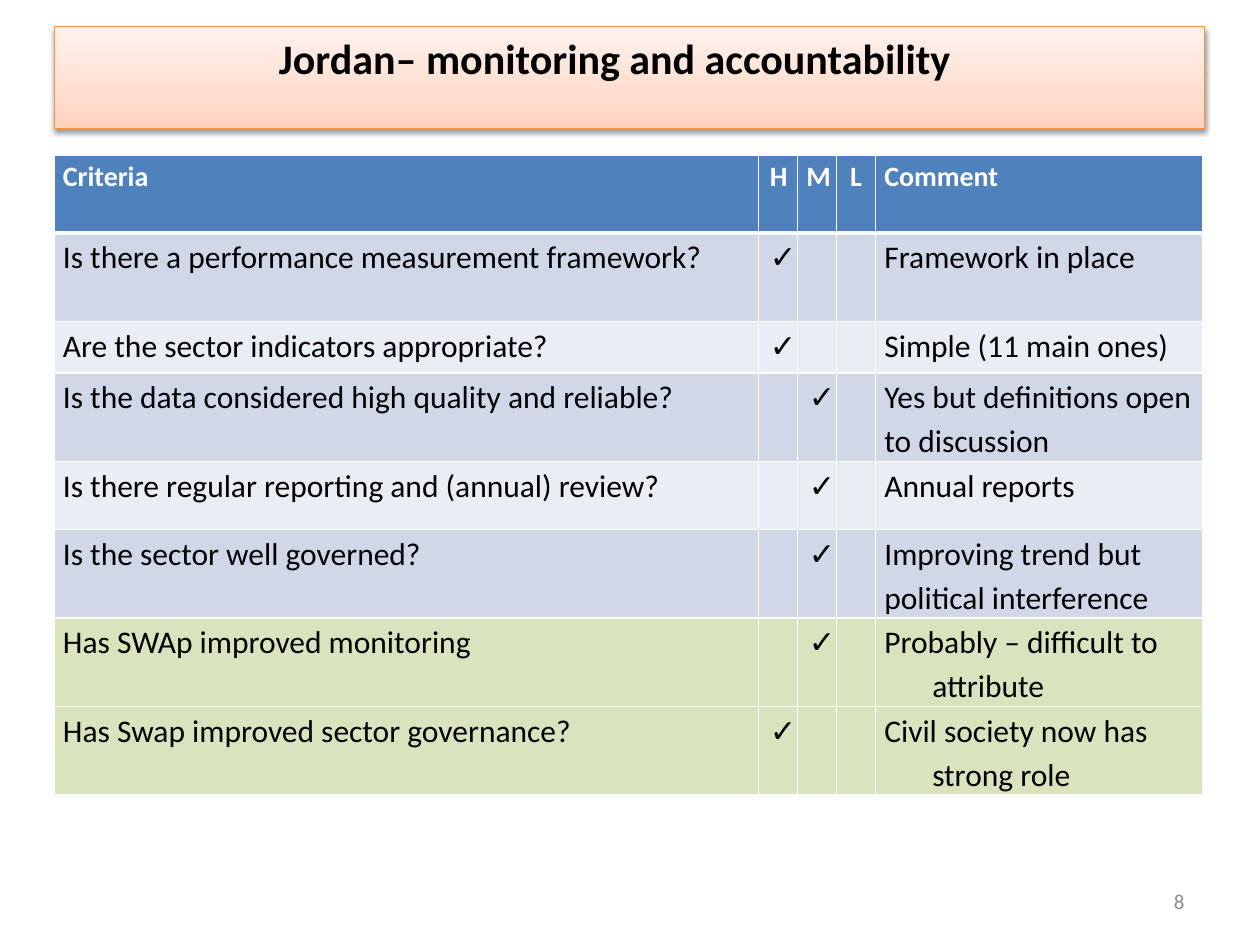
from copy import deepcopy

from lxml import etree
from pptx import Presentation
from pptx.dml.color import RGBColor
from pptx.enum.text import MSO_ANCHOR, PP_ALIGN
from pptx.oxml.ns import qn
from pptx.util import Inches, Pt

WHITE = RGBColor(0xFF, 0xFF, 0xFF)
BLACK = RGBColor(0, 0, 0)
GREY = RGBColor(0x8C, 0x8C, 0x8C)
ORANGE = RGBColor(0xF6, 0x92, 0x40)
HEADER_BLUE = RGBColor(0x4F, 0x81, 0xBD)
BANDS = (RGBColor(0xD0, 0xD8, 0xE8), RGBColor(0xE9, 0xED, 0xF4))
GREEN = RGBColor(0xD7, 0xE4, 0xBD)
BANNER_STOPS = (
    (0, RGBColor(0xFF, 0xD2, 0xBD)),
    (0.35, RGBColor(0xFF, 0xDE, 0xD0)),
    (1, RGBColor(0xFF, 0xF2, 0xED)),
)

HEADER = ("Criteria", "H", "M", "L", "Comment")
RATINGS = "HML"
CRITERIA = (
    ("Is there a performance measurement framework?", "H", "Framework in place"),
    ("Are the sector indicators appropriate?", "H", "Simple (11 main ones)"),
    ("Is the data considered high quality and reliable?", "M",
     "Yes but definitions open to discussion"),
    ("Is there regular reporting and (annual) review?", "M", "Annual reports"),
    ("Is the sector well governed?", "M",
     "Improving trend but political interference"),
    ("Has SWAp improved monitoring", "M", "Probably – difficult to attribute"),
    ("Has Swap improved sector governance?", "H",
     "Civil society now has strong role"),
)
FIRST_SWAP_ROW = 6
COLUMN_WIDTHS = (5.59, 0.31, 0.31, 0.31, 2.6)
ROW_HEIGHTS = (0.62, 0.7, 0.41, 0.7, 0.54, 0.7, 0.7, 0.7)
HANGING = (0.38, -0.38)
MARK_INDENT = (0.02, 0)

HEADER_FONT = {"name": "Calibri", "size": Pt(16), "bold": True}
BODY_FONT = {"name": "Calibri", "size": Pt(18), "bold": False}
TITLE_FONT = {"name": "Calibri", "size": Pt(24), "bold": True}
NUMBER_FONT = {"name": "Calibri", "size": Pt(12)}


def set_all(target, values):
    for name, value in values.items():
        setattr(target, name, value)


def format_font(font, values, color):
    set_all(font, values)
    font.color.rgb = color


def place(shape, box):
    names = ("left", "top", "width", "height")
    set_all(shape, dict(zip(names, map(Inches, box))))


def add_shadow(shape):
    shape.shadow.inherit = False
    effects = shape._element.spPr.find(qn("a:effectLst"))
    shadow = etree.SubElement(effects, qn("a:outerShdw"), blurRad=str(Pt(3.1)),
                              dist=str(Pt(1.6)), dir="5400000", rotWithShape="0")
    color = etree.SubElement(shadow, qn("a:srgbClr"), val=str(BLACK))
    etree.SubElement(color, qn("a:alpha"), val="38000")


def format_banner(title, box):
    place(title, box)
    title.fill.gradient()
    title.fill.gradient_angle = 90
    stop_list = title._element.spPr.find(".//" + qn("a:gsLst"))
    stop_list.insert(1, deepcopy(stop_list[0]))
    for stop, (position, color) in zip(title.fill.gradient_stops, BANNER_STOPS):
        stop.position = position
        stop.color.rgb = color
    title.line.color.rgb = ORANGE
    title.line.width = Pt(0.75)
    add_shadow(title)

    frame = title.text_frame
    frame.text = "Jordan– monitoring and accountability"
    set_all(frame, {"vertical_anchor": MSO_ANCHOR.TOP, "word_wrap": True,
                    "margin_left": Inches(0.1), "margin_right": Inches(0.33),
                    "margin_top": Inches(0.05), "margin_bottom": Inches(0.05)})
    paragraph = frame.paragraphs[0]
    paragraph.alignment = PP_ALIGN.CENTER
    format_font(paragraph.font, TITLE_FONT, BLACK)


def add_borders(cell, widths):
    properties = cell._tc.get_or_add_tcPr()
    for side, width in widths.items():
        line = etree.SubElement(properties, qn("a:ln" + side), w=str(Pt(width)))
        fill = etree.SubElement(line, qn("a:solidFill"))
        etree.SubElement(fill, qn("a:srgbClr"), val=str(WHITE))


def row_color(row):
    if row == 0:
        return HEADER_BLUE
    return GREEN if row >= FIRST_SWAP_ROW else BANDS[(row - 1) % 2]


def cell_indent(row, column):
    if column == 0 or (column == 4 and row >= FIRST_SWAP_ROW):
        return HANGING
    return MARK_INDENT if column < 4 and (row or column == 1) else (0, 0)


def fill_cell(cell, text, row, column):
    cell.text = text
    set_all(cell, {"margin_left": Inches(0.07), "margin_right": Inches(0.07),
                   "margin_top": 0, "margin_bottom": 0})
    add_borders(cell, {"L": 1, "R": 1, "T": 3 if row == 1 else 1,
                       "B": 3 if row == 0 else 1})
    cell.fill.solid()
    cell.fill.fore_color.rgb = row_color(row)

    paragraph = cell.text_frame.paragraphs[0]
    paragraph.line_spacing = 1.15
    if row == 0 and text in ("M", "L"):
        paragraph.alignment = PP_ALIGN.CENTER
    margin, first_line = cell_indent(row, column)
    properties = paragraph._p.get_or_add_pPr()
    properties.set("marL", str(Inches(margin)))
    properties.set("indent", str(Inches(first_line)))
    if row == 0:
        format_font(paragraph.font, HEADER_FONT, WHITE)
    else:
        format_font(paragraph.font, BODY_FONT, BLACK)


def add_criteria_table(slide, box):
    rows = [HEADER]
    for question, rating, comment in CRITERIA:
        marks = ["✓" if rating == level else "" for level in RATINGS]
        rows.append((question, *marks, comment))
    table = slide.shapes.add_table(len(rows), len(HEADER),
                                   *map(Inches, box)).table
    table.horz_banding = False
    for column, width in zip(table.columns, COLUMN_WIDTHS):
        column.width = Inches(width)
    for row, height in zip(table.rows, ROW_HEIGHTS):
        row.height = Inches(height)
    for row, texts in enumerate(rows):
        for column, text in enumerate(texts):
            fill_cell(table.cell(row, column), text, row, column)


def add_slide_number(slide, box):
    frame = slide.shapes.add_textbox(*map(Inches, box)).text_frame
    set_all(frame, {"text": "8", "word_wrap": True,
                    "vertical_anchor": MSO_ANCHOR.MIDDLE})
    paragraph = frame.paragraphs[0]
    paragraph.alignment = PP_ALIGN.RIGHT
    format_font(paragraph.font, NUMBER_FONT, GREY)


def main():
    deck = Presentation()
    deck.slide_width, deck.slide_height = Inches(10), Inches(7.5)
    slide = deck.slides.add_slide(deck.slide_layouts[5])
    format_banner(slide.shapes.title, (0.43, 0.21, 9.13, 0.81))
    add_criteria_table(slide, (0.43, 1.23, 9.12, sum(ROW_HEIGHTS)))
    add_slide_number(slide, (7.17, 6.95, 2.33, 0.4))
    deck.save("out.pptx")


if __name__ == "__main__":
    main()
